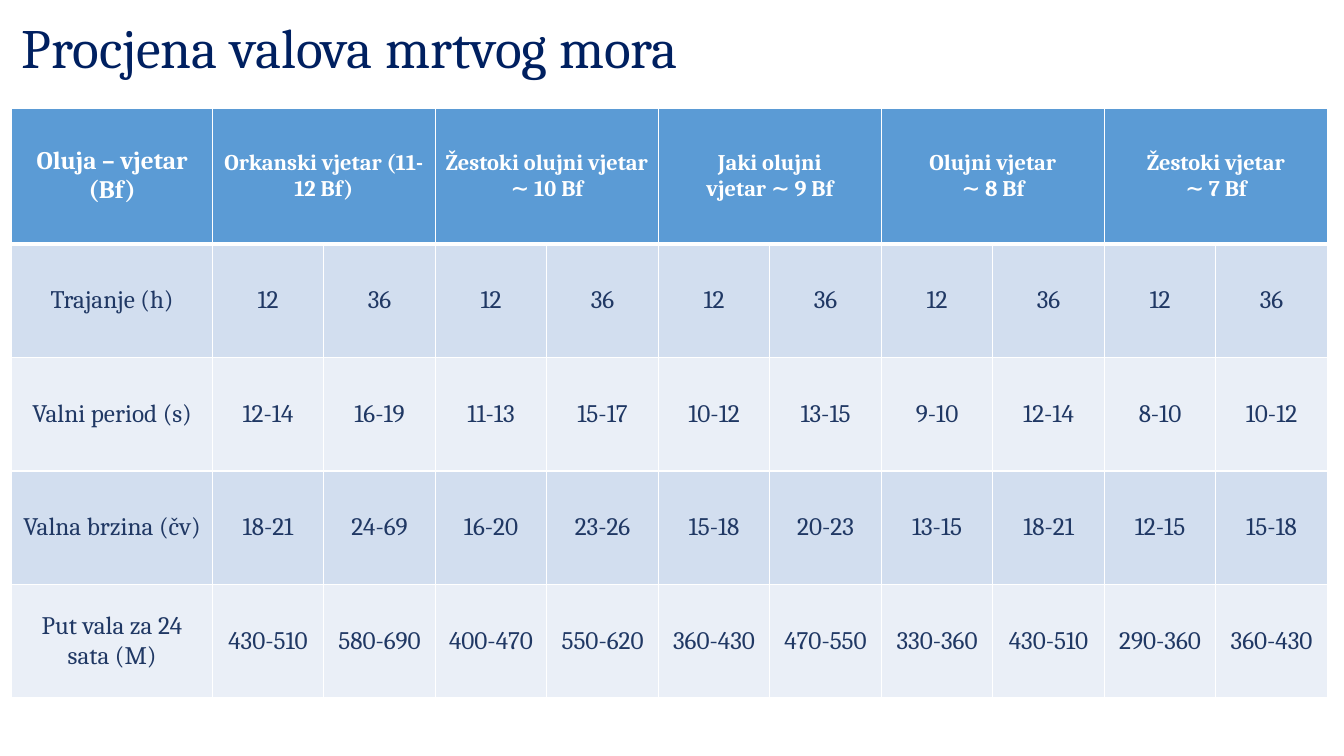
from dataclasses import dataclass

from lxml.etree import SubElement as Sub
from pptx import Presentation
from pptx.dml.color import RGBColor as Rgb
from pptx.enum.text import MSO_ANCHOR as Anchor, PP_ALIGN as Align
from pptx.oxml.ns import qn
from pptx.util import Cm, Pt


@dataclass(frozen=True)
class Theme:
    font: str = "Cambria"
    title: str = "002060"
    head: str = "5B9BD5"
    ink: str = "203864"
    white: str = "FFFFFF"
    bands: tuple = ("D2DEEF", "EAEFF7")
    big: float = 39.6
    body: float = 18
    small: float = 16
    thin: float = 1
    thick: float = 3


HEADS = [
    "Orkanski vjetar (11-12 Bf)",
    "Žestoki olujni vjetar ∼ 10 Bf",
    "Jaki olujni\nvjetar ∼ 9 Bf",
    "Olujni vjetar\n∼ 8 Bf",
    "Žestoki vjetar\n∼ 7 Bf",
]
ROWS = [
    ["Trajanje (h)"] + ["12", "36"] * len(HEADS),
    ["Valni period (s)", "12-14", "16-19", "11-13", "15-17", "10-12",
     "13-15", "9-10", "12-14", "8-10", "10-12"],
    ["Valna brzina (čv)", "18-21", "24-69", "16-20", "23-26", "15-18",
     "20-23", "13-15", "18-21", "12-15", "15-18"],
    ["Put vala za 24 sata (M)", "430-510", "580-690", "400-470", "550-620",
     "360-430", "470-550", "330-360", "430-510", "290-360", "360-430"],
]


class Deck:
    def __init__(self, theme):
        self.theme = theme
        self.prs = Presentation()
        self.prs.slide_width = Cm(33.87)
        self.prs.slide_height = Cm(19.05)
        self.slide = self.prs.slides.add_slide(self.prs.slide_layouts[6])

    def label(self, frame, text, size, color, bold=False, align=Align.CENTER):
        frame.text = text
        frame.word_wrap = True
        for par in frame.paragraphs:
            par.alignment = align
            for run in par.runs:
                run.font.name = self.theme.font
                run.font.size = Pt(size)
                run.font.bold = bold
                run.font.color.rgb = Rgb.from_string(color)

    def title(self, text, left, top, width, height):
        box = self.slide.shapes.add_textbox(Cm(left), Cm(top), Cm(width), Cm(height))
        frame = box.text_frame
        self.label(frame, text, self.theme.big, self.theme.title, align=Align.LEFT)
        frame.vertical_anchor = Anchor.MIDDLE
        frame.paragraphs[0].line_spacing = 0.9

    def edges(self, cell, top, base):
        props = cell._tc.get_or_add_tcPr()
        thin = self.theme.thin
        for side, width in zip("LRTB", (thin, thin, top, base)):
            line = Sub(props, qn(f"a:ln{side}"), w=str(Pt(width)))
            fill = Sub(line, qn("a:solidFill"))
            Sub(fill, qn("a:srgbClr"), val=self.theme.white)

    def paint(self, cell, fill, top, base):
        self.edges(cell, top, base)
        cell.fill.solid()
        cell.fill.fore_color.rgb = Rgb.from_string(fill)
        cell.vertical_anchor = Anchor.MIDDLE

    def table(self, corner, heads, rows, left, top, wides, talls):
        look = self.theme
        grid = self.slide.shapes.add_table(
            len(talls), len(wides), Cm(left), Cm(top),
            Cm(sum(wides)), Cm(sum(talls))).table
        for col, wide in zip(grid.columns, wides):
            col.width = Cm(wide)
        for row, tall in zip(grid.rows, talls):
            row.height = Cm(tall)

        for col in range(len(wides)):
            self.paint(grid.cell(0, col), look.head, look.thin, look.thick)
        self.label(grid.cell(0, 0).text_frame, corner, look.body, look.white, True)
        for num, head in enumerate(heads):
            cell = grid.cell(0, 1 + 2 * num)
            cell.merge(grid.cell(0, 2 + 2 * num))
            self.label(cell.text_frame, head, look.small, look.white, True)

        for num, row in enumerate(rows):
            upper = look.thin if num else look.thick
            for col, text in enumerate(row):
                cell = grid.cell(num + 1, col)
                self.paint(cell, look.bands[num % 2], upper, look.thin)
                self.label(cell.text_frame, text, look.body, look.ink)


def main():
    deck = Deck(Theme())
    deck.title("Procjena valova mrtvog mora", 0.3, 0.38, 33.12, 1.8)
    deck.table("Oluja – vjetar\n(Bf)", HEADS, ROWS, 0.3, 2.72,
               [5.05] + [2.81] * 2 * len(HEADS), [3.43] + [2.86] * len(ROWS))
    deck.prs.save("out.pptx")


if __name__ == "__main__":
    main()
